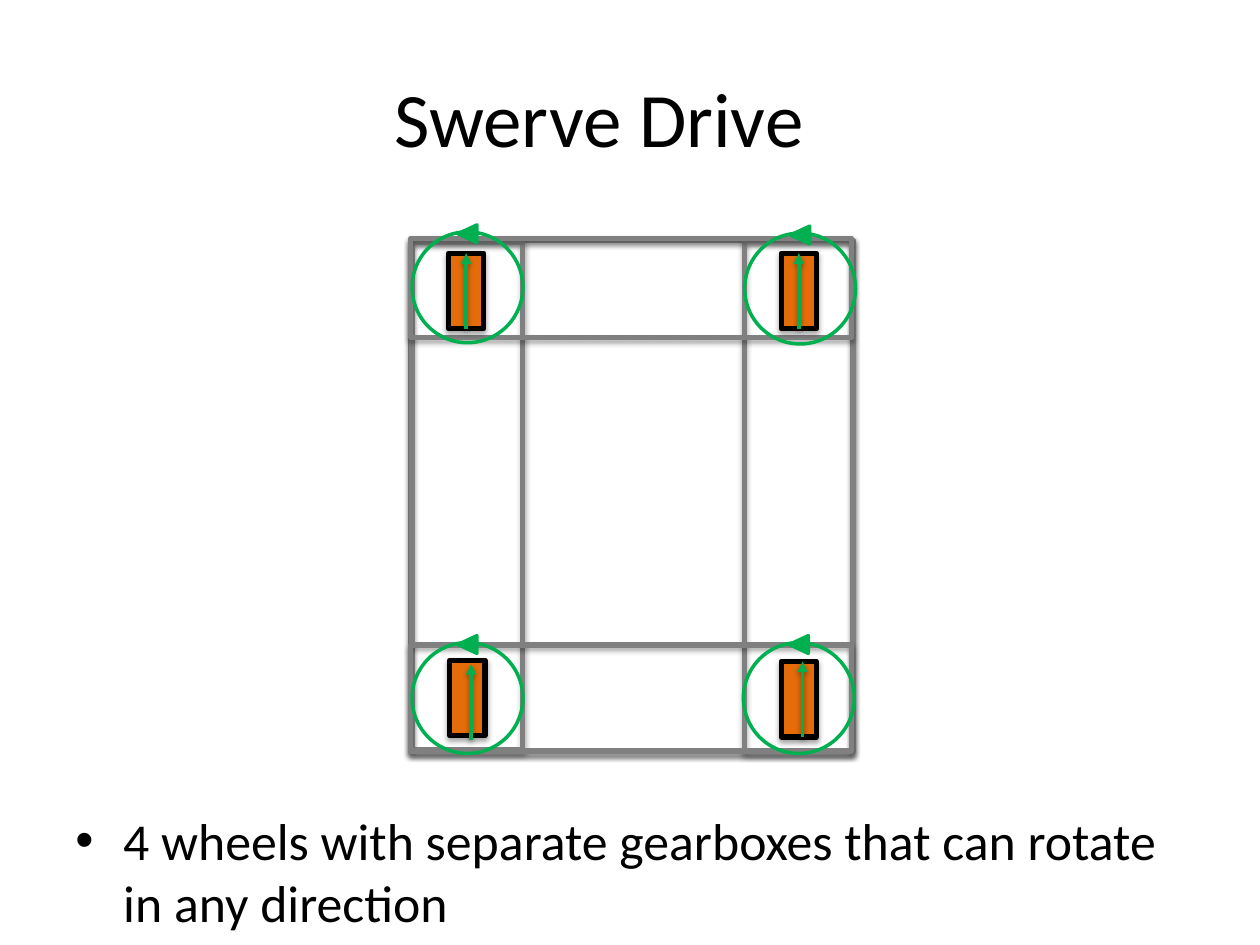
import pptx
import pptx.util
import pptx.dml.color
import pptx.enum.shapes
import pptx.enum.text
import pptx.oxml.ns
import lxml.etree

Inches = pptx.util.Inches
Pt = pptx.util.Pt
RGBColor = pptx.dml.color.RGBColor
SHAPE = pptx.enum.shapes.MSO_SHAPE
qn = pptx.oxml.ns.qn

BLACK = RGBColor(0x00, 0x00, 0x00)
GRAY = RGBColor(0x80, 0x80, 0x80)
ORANGE = RGBColor(0xE4, 0x6C, 0x0A)
GREEN = RGBColor(0x00, 0xB0, 0x50)
FONT = "Calibri"


def add_shadow(shape, opacity, distance):
    """Give a shape or connector a soft shadow straight below it."""
    properties = shape.element.spPr
    effects = properties.find(qn("a:effectLst"))
    if effects is None:
        effects = lxml.etree.SubElement(properties, qn("a:effectLst"))
    shadow = lxml.etree.SubElement(
        effects, qn("a:outerShdw"), blurRad=str(Pt(3.1)),
        dist=str(Pt(distance)), dir="5400000", rotWithShape="0")
    color = lxml.etree.SubElement(shadow, qn("a:srgbClr"), val=str(BLACK))
    lxml.etree.SubElement(color, qn("a:alpha"), val=str(opacity * 1000))


def add_outline(shapes, preset, box, line_color, line_width, fill=None):
    shape = shapes.add_shape(preset, *(Inches(length) for length in box))
    shape.shadow.inherit = False
    if fill is None:
        shape.fill.background()
    else:
        shape.fill.solid()
        shape.fill.fore_color.rgb = fill
    shape.line.color.rgb = line_color
    shape.line.width = Pt(line_width)
    return shape


def add_text(slide, box, text, size):
    text_box = slide.shapes.add_textbox(*(Inches(length) for length in box))
    frame = text_box.text_frame
    frame.word_wrap = True
    frame.text = text
    font = frame.paragraphs[0].runs[0].font
    font.name = FONT
    font.size = Pt(size)
    font.color.rgb = BLACK
    return frame


def add_title(slide, box):
    frame = add_text(slide, box, "Swerve Drive", 44)
    frame.vertical_anchor = pptx.enum.text.MSO_ANCHOR.MIDDLE
    frame.paragraphs[0].alignment = pptx.enum.text.PP_ALIGN.CENTER


def add_caption(slide, box):
    frame = add_text(
        slide, box,
        "4 wheels with separate gearboxes that can rotate in any direction", 29.6)
    properties = frame.paragraphs[0]._p.get_or_add_pPr()
    properties.set("marL", str(Inches(0.38)))
    properties.set("indent", str(Inches(-0.38)))
    lxml.etree.SubElement(properties, qn("a:buFont"), typeface="Arial")
    lxml.etree.SubElement(properties, qn("a:buChar"), char="•")


def add_chassis(slide, box):
    """Outer frame, two side rails and two cross rails."""
    left, top, width, height = box
    rails = [
        box,
        (left + 2.65, top, 0.86, height),
        (left + 0.01, top + 0.01, 0.88, height - 0.02),
        (left, top - 0.02, width - 0.01, 0.79),
        (left, top + 3.21, width - 0.01, 0.84),
    ]
    for rail in rails:
        shape = add_outline(slide.shapes, SHAPE.RECTANGLE, rail, GRAY, 3)
        add_shadow(shape, 35, 1.8)


def add_wheel_module(slide, box, wheel_at, arrow_at):
    """Wheel, turning circle and drive arrow of one corner."""
    left, top, width, height = box
    wheel = add_outline(slide.shapes, SHAPE.RECTANGLE, (*wheel_at, 0.28, 0.6),
                        BLACK, 3, ORANGE)
    add_shadow(wheel, 35, 1.8)

    # Turning circle with its direction marker
    swivel = slide.shapes.add_group_shape()
    add_outline(swivel.shapes, SHAPE.OVAL, box, GREEN, 2)
    marker = add_outline(swivel.shapes, SHAPE.ISOSCELES_TRIANGLE,
                         (left + 0.37, top - 0.06, 0.14, 0.15), GREEN, 2, GREEN)
    marker.rotation = 270

    # Drive arrow, joined to the wheel when it spans it exactly
    x, tip = arrow_at or (wheel_at[0] + 0.14, wheel_at[1])
    arrow = slide.shapes.add_connector(
        pptx.enum.shapes.MSO_CONNECTOR.STRAIGHT,
        Inches(x), Inches(tip + 0.6), Inches(x), Inches(tip))
    if arrow_at is None:
        arrow.begin_connect(wheel, 2)
        arrow.end_connect(wheel, 0)
    arrow.line.color.rgb = GREEN
    arrow.line.width = Pt(2)
    line = arrow.element.spPr.find(qn("a:ln"))
    lxml.etree.SubElement(line, qn("a:tailEnd"), type="triangle")
    add_shadow(arrow, 38, 1.6)


def main():
    presentation = pptx.Presentation()
    presentation.slide_width = Inches(10)
    presentation.slide_height = Inches(7.5)
    slide = presentation.slides.add_slide(presentation.slide_layouts[6])

    add_title(slide, (1.91, 0.3, 5.69, 1.25))
    add_caption(slide, (0.5, 6.37, 9, 1.09))
    add_chassis(slide, (3.26, 1.91, 3.51, 4.05))

    # Circle corner, wheel corner, arrow tip (None: centred on the wheel)
    modules = [
        ((3.27, 1.84), (3.56, 2.01), None),
        ((5.91, 1.85), (6.2, 2.01), None),
        ((3.27, 5.1), (3.57, 5.24), (3.74, 5.27)),
        ((5.9, 5.1), (6.2, 5.25), (6.37, 5.25)),
    ]
    for circle_at, wheel_at, arrow_at in modules:
        add_wheel_module(slide, (*circle_at, 0.88, 0.88), wheel_at, arrow_at)

    presentation.save("out.pptx")


if __name__ == "__main__":
    main()
